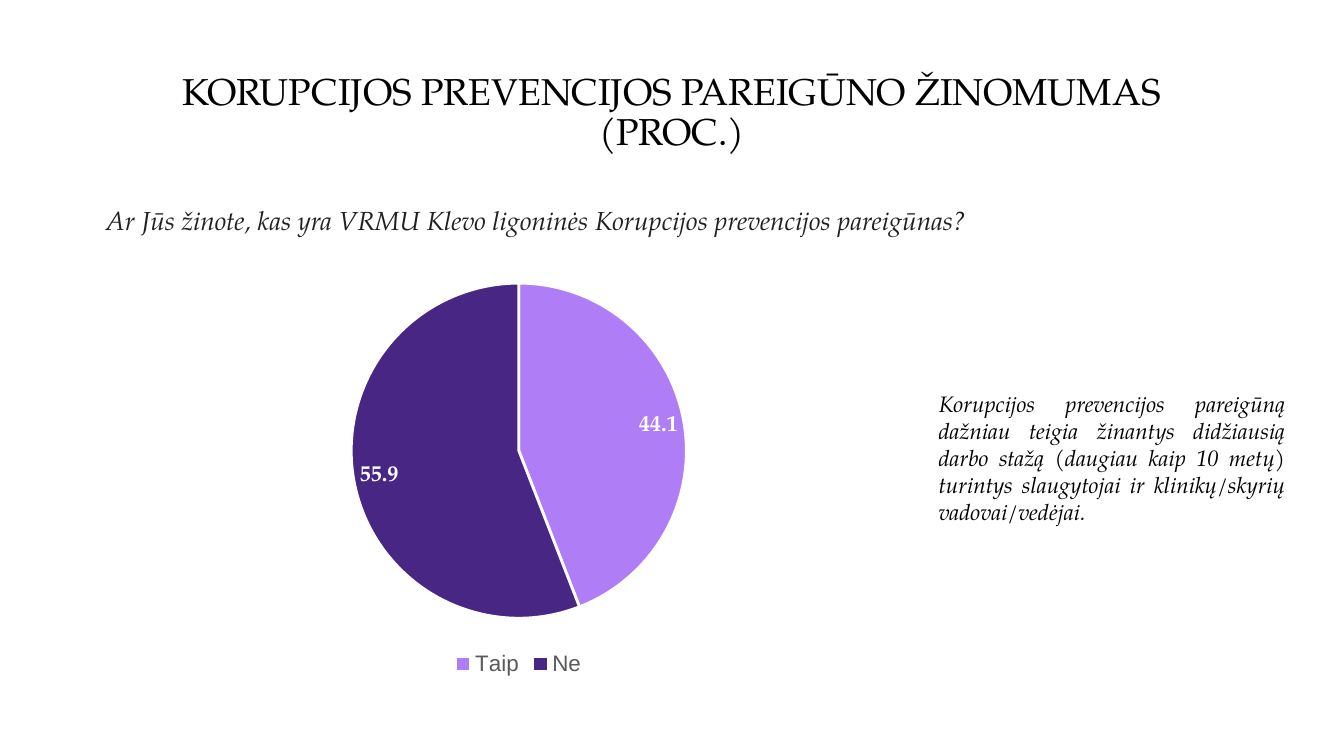
import pptx
import pptx.chart.data
import pptx.dml.color
import pptx.enum.chart
import pptx.enum.shapes
import pptx.enum.text
import pptx.util

WIDTH = pptx.util.Inches(10)
HEIGHT = WIDTH * 9 // 16
SERIF, SANS = "TeX Gyre Pagella", "Arial"
ALIGN = pptx.enum.text.PP_ALIGN
MIDDLE = pptx.enum.text.MSO_ANCHOR.MIDDLE
ANSWERS = {"Taip": (44.1, "AF7DF6"), "Ne": (55.9, "482683")}


def color(value):
    """Turn a hex string into a colour."""
    return pptx.dml.color.RGBColor.from_string(value)


def place(left, top, width, height):
    """Turn percentages of the slide into a box in slide units."""
    return [round(percent * side / 100) for percent, side in
            ((left, WIDTH), (top, HEIGHT), (width, WIDTH), (height, HEIGHT))]


def style_font(font, size, ink, face=SERIF, bold=False, italic=False):
    """Set the look of a font."""
    font.size = pptx.util.Pt(size)
    font.color.rgb = color(ink)
    font.name = face
    font.bold = bold
    font.italic = italic


def write(frame, wording, size, ink, align, italic=False):
    """Fill a text frame with one styled paragraph and return it."""
    frame.word_wrap = True
    frame.text = wording
    paragraph = frame.paragraphs[0]
    paragraph.alignment = align
    style_font(paragraph.runs[0].font, size, ink, italic=italic)
    return paragraph


def add_title(slide, box):
    """Place the centred heading."""
    frame = slide.shapes.add_textbox(*box).text_frame
    frame.vertical_anchor = MIDDLE
    frame.margin_left = frame.margin_right = pptx.util.Inches(0.15)
    heading = write(frame, "KORUPCIJOS PREVENCIJOS PAREIGŪNO ŽINOMUMAS (PROC.)",
                    20, "000000", ALIGN.CENTER)
    heading.line_spacing = 0.9


def add_question(slide, box):
    """Place the survey question."""
    frame = slide.shapes.add_textbox(*box).text_frame
    question = write(
        frame,
        "Ar Jūs žinote, kas yra VRMU Klevo ligoninės Korupcijos prevencijos pareigūnas?",
        14, "202124", ALIGN.JUSTIFY, italic=True)
    question.line_spacing = 0.9
    question.space_before = pptx.util.Pt(7.5)


def add_answers(slide, box):
    """Place the pie of answers with its legend."""
    shares = pptx.chart.data.CategoryChartData()
    shares.categories = list(ANSWERS)
    shares.add_series("Series 1", [share for share, _ in ANSWERS.values()])
    pie = slide.shapes.add_chart(
        pptx.enum.chart.XL_CHART_TYPE.PIE, *box, shares).chart
    style_font(pie.font, 10, "000000", SANS)
    pie.has_title = False
    pie.has_legend = True
    pie.legend.position = pptx.enum.chart.XL_LEGEND_POSITION.BOTTOM
    pie.legend.include_in_layout = False
    style_font(pie.legend.font, 12, "595959", SANS)

    plot = pie.plots[0]
    plot.vary_by_categories = True
    for index, (_, fill) in enumerate(ANSWERS.values()):
        wedge = plot.series[0].points[index].format
        wedge.fill.solid()
        wedge.fill.fore_color.rgb = color(fill)
        wedge.line.color.rgb = color("FFFFFF")
        wedge.line.width = pptx.util.Pt(1.5)

    labels = plot.series[0].data_labels
    labels.show_value = True
    labels.show_percentage = False
    labels.position = pptx.enum.chart.XL_LABEL_POSITION.BEST_FIT
    style_font(labels.font, 12, "FFFFFF", bold=True)


def add_finding(slide, box):
    """Place the remark beside the pie."""
    panel = slide.shapes.add_shape(
        pptx.enum.shapes.MSO_SHAPE.FLOWCHART_PROCESS, *box)
    panel.shadow.inherit = False
    panel.fill.solid()
    panel.fill.fore_color.rgb = color("FFFFFF")
    panel.line.color.rgb = color("FFFFFF")
    panel.line.width = pptx.util.Pt(1)
    panel.text_frame.vertical_anchor = MIDDLE
    write(panel.text_frame,
          "Korupcijos prevencijos pareigūną dažniau teigia žinantys didžiausią "
          "darbo stažą (daugiau kaip 10 metų) turintys slaugytojai ir "
          "klinikų/skyrių vadovai/vedėjai.",
          12, "000000", ALIGN.JUSTIFY, italic=True)


def main():
    """Build and save the slide."""
    deck = pptx.Presentation()
    deck.slide_width = WIDTH
    deck.slide_height = HEIGHT
    slide = deck.slides.add_slide(deck.slide_layouts[6])
    margin = 6.9
    column = 100 - 2 * margin
    add_title(slide, place(margin, 5.3, column, 19.4))
    add_question(slide, place(margin, 26.65, column, 63.5))
    add_answers(slide, place(5.25, 35, 66.7, 55.1))
    add_finding(slide, place(68.85, 40.4, 27.8, 40.2))
    deck.save("out.pptx")


if __name__ == "__main__":
    main()
